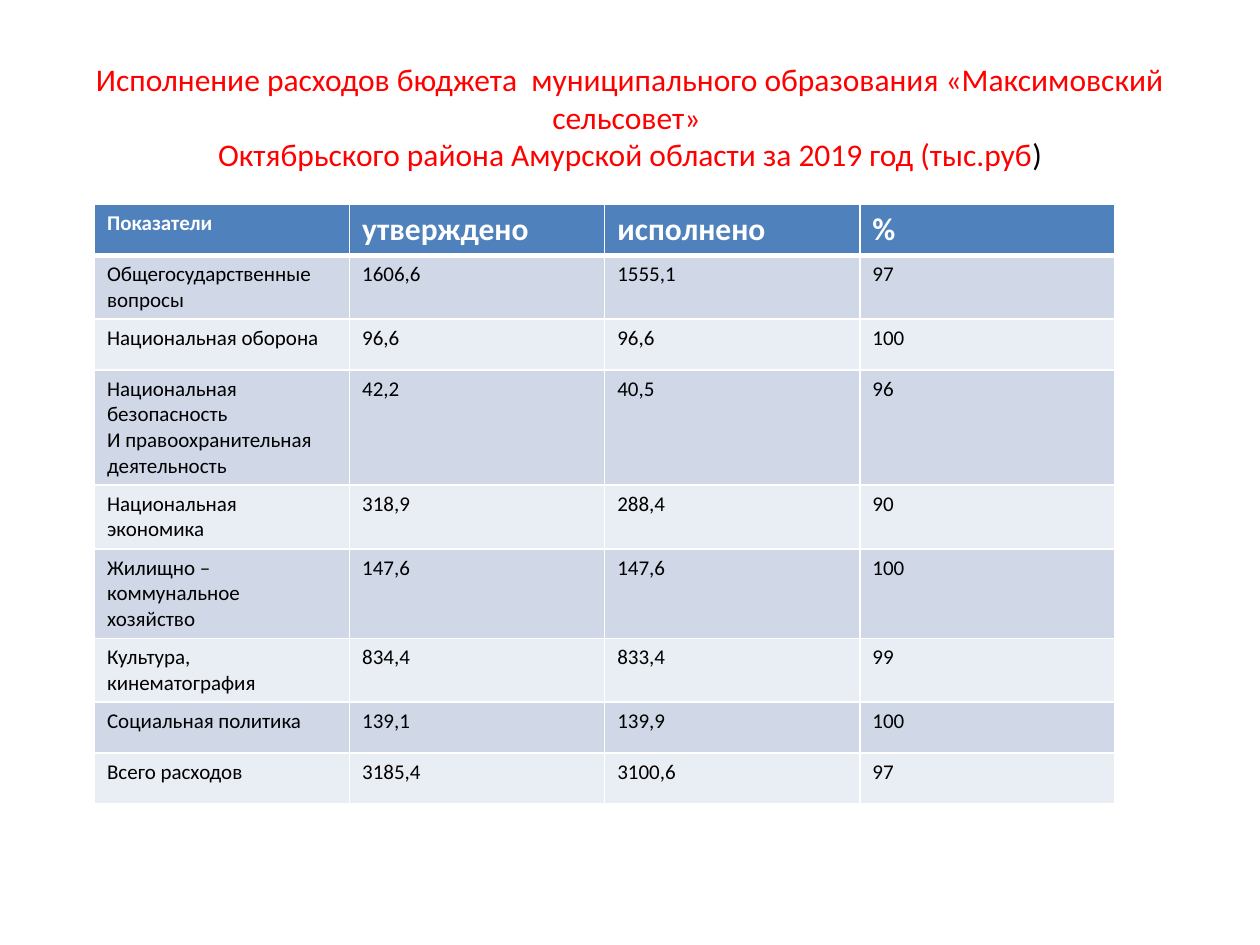
import pptx
import pptx.util
import pptx.dml.color
import pptx.enum.text
import pptx.oxml
import pptx.oxml.ns

Inches = pptx.util.Inches
Pt = pptx.util.Pt

COLORS = {
    "title": "FF0000",
    "text": "000000",
    "white": "FFFFFF",
    "header": "4F81BD",
    "band_dark": "D0D8E8",
    "band_light": "E9EDF4",
}

TITLE_LINES = [
    [("Исполнение расходов бюджета  муниципального образования «Максимовский сельсовет» ", "title")],
    [("Октябрьского района Амурской области за 2019 год (тыс.руб", "title"), (")", "text")],
]

HEADERS = ["Показатели", "утверждено", "исполнено", "%"]
EXPENSES = [
    ["Общегосударственные  вопросы", "1606,6", "1555,1", "97"],
    ["Национальная оборона", "96,6", "96,6", "100"],
    ["Национальная безопасность\nИ правоохранительная деятельность", "42,2", "40,5", "96"],
    ["Национальная  экономика", "318,9", "288,4", "90"],
    ["Жилищно – коммунальное\nхозяйство", "147,6", "147,6", "100"],
    ["Культура, кинематография", "834,4", "833,4", "99"],
    ["Социальная политика", "139,1", "139,9", "100"],
    ["Всего расходов", "3185,4", "3100,6", "97"],
]


class SlideBuilder:
    font = "Calibri"

    def __init__(self, slide):
        self.slide = slide

    def color(self, name):
        return pptx.dml.color.RGBColor.from_string(COLORS[name])

    def run(self, p, text, size, color, bold=False):
        r = p.add_run()
        r.text = text
        r.font.name = self.font
        r.font.size = Pt(size)
        r.font.bold = bold
        r.font.color.rgb = self.color(color)

    def title(self, lines, left, top, width, height):
        sp = self.slide.shapes.title
        sp.left, sp.top = Inches(left), Inches(top)
        sp.width, sp.height = Inches(width), Inches(height)
        tf = sp.text_frame
        tf.word_wrap = True
        tf.vertical_anchor = pptx.enum.text.MSO_ANCHOR.MIDDLE
        p = tf.paragraphs[0]
        p.alignment = pptx.enum.text.PP_ALIGN.CENTER
        for i, line in enumerate(lines):
            if i:
                p.add_line_break()
            for text, color in line:
                self.run(p, text, 18, color)

    def borders(self, cell, **widths):
        tcPr = cell._tc.get_or_add_tcPr()
        for side in ("L", "R", "T", "B"):
            width = Pt(widths.get(side, 1))
            tcPr.append(pptx.oxml.parse_xml(
                f'<a:ln{side} {pptx.oxml.ns.nsdecls("a")} w="{width}"><a:solidFill>'
                f'<a:srgbClr val="{COLORS["white"]}"/></a:solidFill></a:ln{side}>'))

    def cell(self, cell, text, fill, size, color="text", bold=False, **widths):
        self.borders(cell, **widths)
        cell.fill.solid()
        cell.fill.fore_color.rgb = self.color(fill)
        tf = cell.text_frame
        for i, line in enumerate(text.split("\n")):
            p = tf.add_paragraph() if i else tf.paragraphs[0]
            self.run(p, line, size, color, bold)

    def table(self, headers, rows, left, top, col_width, row_height):
        n_rows, n_cols = len(rows) + 1, len(headers)
        table = self.slide.shapes.add_table(
            n_rows, n_cols, Inches(left), Inches(top),
            Inches(col_width * n_cols), Inches(row_height * n_rows)).table
        for column in table.columns:
            column.width = Inches(col_width)
        for row in table.rows:
            row.height = Inches(row_height)
        for c, text in enumerate(headers):
            self.cell(table.cell(0, c), text, "header", 18 if c else 12, "white", True, B=3)
        for r, values in enumerate(rows, 1):
            fill = "band_dark" if r % 2 else "band_light"
            for c, text in enumerate(values):
                self.cell(table.cell(r, c), text, fill, 12, T=3 if r == 1 else 1)


def main():
    prs = pptx.Presentation()
    prs.slide_width, prs.slide_height = Inches(10), Inches(7.5)
    builder = SlideBuilder(prs.slides.add_slide(prs.slide_layouts[5]))
    builder.title(TITLE_LINES, 0.5, 0.3, 9, 1.25)
    builder.table(HEADERS, EXPENSES, 0.75, 1.62, 2.025, 0.405)
    prs.save("out.pptx")


if __name__ == "__main__":
    main()
